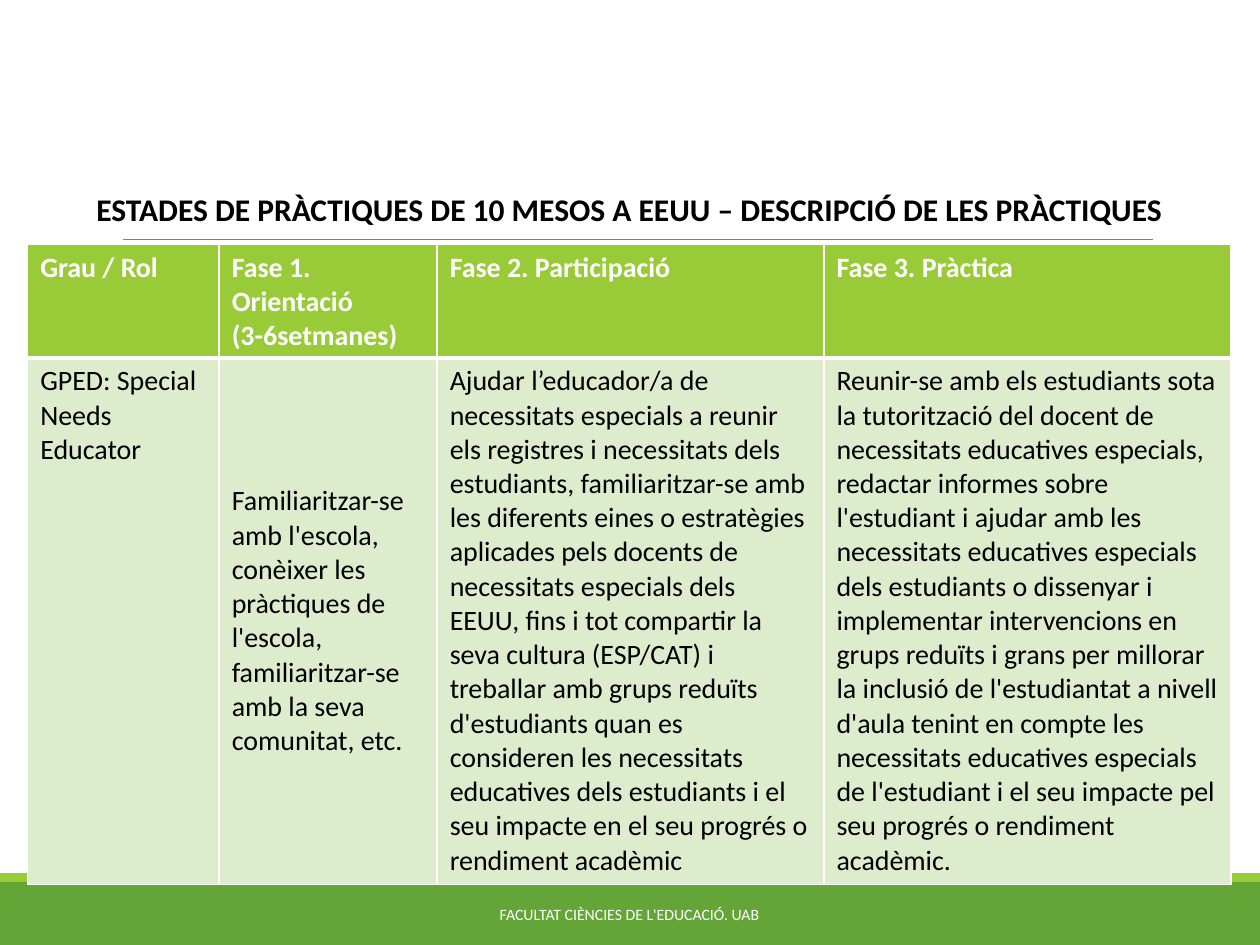
from dataclasses import dataclass

from lxml import etree
from pptx import Presentation
from pptx.dml.color import RGBColor
from pptx.enum.shapes import MSO_CONNECTOR, MSO_SHAPE
from pptx.enum.text import MSO_ANCHOR, PP_ALIGN
from pptx.oxml.ns import qn
from pptx.slide import Slide
from pptx.table import _Cell
from pptx.util import Inches, Pt

RECTANGLE = MSO_SHAPE.RECTANGLE
STRAIGHT = MSO_CONNECTOR.STRAIGHT
TOP, MIDDLE = MSO_ANCHOR.TOP, MSO_ANCHOR.MIDDLE
LEFT, CENTER = PP_ALIGN.LEFT, PP_ALIGN.CENTER

WHITE = RGBColor(0xFF, 0xFF, 0xFF)
BLACK = RGBColor(0x00, 0x00, 0x00)
GRAY = RGBColor(0x80, 0x80, 0x80)
GREEN = RGBColor(0x63, 0xA5, 0x37)
LIME = RGBColor(0x99, 0xCB, 0x38)
PALE_GREEN = RGBColor(0xDE, 0xEC, 0xCE)

FONT = "Calibri"
SLIDE_WIDTH, SLIDE_HEIGHT = 10, 7.5
TABLE_LEFT, TABLE_TOP = 0.22, 1.94
COLUMN_WIDTHS = (1.52, 1.73, 3.07, 3.23)
ROW_HEIGHTS = (0.89, 4.18)


@dataclass(frozen=True)
class Box:
    left: float
    top: float
    width: float
    height: float

    def lengths(self) -> list[int]:
        return [Inches(n) for n in (self.left, self.top, self.width, self.height)]


@dataclass(frozen=True)
class TextStyle:
    size: float
    color: RGBColor
    bold: bool = False
    align: PP_ALIGN = LEFT


@dataclass(frozen=True)
class Band:
    box: Box
    color: RGBColor


@dataclass(frozen=True)
class Phase:
    """One table column: its heading and its description."""
    heading: str
    description: str
    anchor: MSO_ANCHOR = TOP


BANDS = (
    Band(Box(0, 7, SLIDE_WIDTH, 0.5), GREEN),
    Band(Box(0, 6.93, SLIDE_WIDTH, 0.07), LIME),
)
TITLE_BOX = Box(0.64, 1.49, 8.72, 5.43)
FOOTER_BOX = Box(3.02, 7.06, 3.95, 0.4)

TITLE_STYLE = TextStyle(18, BLACK, True)
FOOTER_STYLE = TextStyle(9, WHITE, align=CENTER)
HEADING_STYLE = TextStyle(16, WHITE, True)
DESCRIPTION_STYLE = TextStyle(16, BLACK)

PHASES = (
    Phase("Grau / Rol", "GPED: Special Needs Educator"),
    Phase(
        "Fase 1. Orientació\n(3-6setmanes)",
        "Familiaritzar-se amb l'escola, conèixer les pràctiques de l'escola, "
        "familiaritzar-se amb la seva comunitat, etc.",
        MIDDLE,
    ),
    Phase(
        "Fase 2. Participació",
        "Ajudar l’educador/a de necessitats especials a reunir els registres i "
        "necessitats dels estudiants, familiaritzar-se amb les diferents eines o "
        "estratègies aplicades pels docents de necessitats especials dels EEUU, "
        "fins i tot compartir la seva cultura (ESP/CAT) i treballar amb grups "
        "reduïts d'estudiants quan es consideren les necessitats educatives dels "
        "estudiants i el seu impacte en el seu progrés o rendiment acadèmic",
    ),
    Phase(
        "Fase 3. Pràctica",
        "Reunir-se amb els estudiants sota la tutorització del docent de "
        "necessitats educatives especials, redactar informes sobre l'estudiant i "
        "ajudar amb les necessitats educatives especials dels estudiants o "
        "dissenyar i implementar intervencions en grups reduïts i grans per "
        "millorar la inclusió de l'estudiantat a nivell d'aula tenint en compte "
        "les necessitats educatives especials de l'estudiant i el seu impacte pel "
        "seu progrés o rendiment acadèmic.",
    ),
)


def write(text_frame, text: str, style: TextStyle) -> None:
    text_frame.word_wrap = True
    text_frame.text = text
    font_values = {"name": FONT, "size": Pt(style.size), "bold": style.bold}
    for paragraph in text_frame.paragraphs:
        paragraph.alignment = style.align
        for run in paragraph.runs:
            for name, value in font_values.items():
                setattr(run.font, name, value)
            run.font.color.rgb = style.color


def add_band(slide: Slide, band: Band) -> None:
    shape = slide.shapes.add_shape(RECTANGLE, *band.box.lengths())
    shape.shadow.inherit = False
    shape.fill.solid()
    shape.fill.fore_color.rgb = band.color
    shape.line.fill.background()


def add_rule(slide: Slide, left: float, right: float, top: float) -> None:
    rule = slide.shapes.add_connector(
        STRAIGHT, Inches(left), Inches(top), Inches(right), Inches(top))
    rule.line.color.rgb = GRAY
    rule.line.width = Pt(0.5)
    etree.SubElement(rule._element.spPr, qn("a:effectLst"))


def add_title(slide: Slide, text: str) -> None:
    text_frame = slide.shapes.add_textbox(*TITLE_BOX.lengths()).text_frame
    write(text_frame, text, TITLE_STYLE)
    text_frame.margin_left = text_frame.margin_right = 0
    paragraph = text_frame.paragraphs[0]
    spacing = {"line_spacing": 0.9, "space_before": Pt(12), "space_after": Pt(2)}
    for name, value in spacing.items():
        setattr(paragraph, name, value)
    properties = paragraph._p.get_or_add_pPr()
    properties.set("marL", str(Inches(0.1)))
    properties.set("indent", str(Inches(-0.1)))
    bullet_color = etree.SubElement(properties, qn("a:buClr"))
    etree.SubElement(bullet_color, qn("a:srgbClr"), val=str(LIME))
    etree.SubElement(properties, qn("a:buChar"), char=" ")


def add_footer(slide: Slide, text: str) -> None:
    text_frame = slide.shapes.add_textbox(*FOOTER_BOX.lengths()).text_frame
    write(text_frame, text, FOOTER_STYLE)
    text_frame.vertical_anchor = MIDDLE


def set_borders(cell: _Cell, top: float, bottom: float) -> None:
    """Draw white borders, 1 point at the sides; must run before the fill is set."""
    properties = cell._tc.get_or_add_tcPr()
    for side, width in {"lnL": 1, "lnR": 1, "lnT": top, "lnB": bottom}.items():
        border = etree.SubElement(properties, qn(f"a:{side}"), w=str(Pt(width)))
        fill = etree.SubElement(border, qn("a:solidFill"))
        etree.SubElement(fill, qn("a:srgbClr"), val=str(WHITE))


def fill_cell(cell: _Cell, text: str, style: TextStyle, color: RGBColor) -> None:
    write(cell.text_frame, text, style)
    cell.fill.solid()
    cell.fill.fore_color.rgb = color


def add_phase_table(slide: Slide) -> None:
    box = Box(TABLE_LEFT, TABLE_TOP, sum(COLUMN_WIDTHS), sum(ROW_HEIGHTS))
    table = slide.shapes.add_table(
        len(ROW_HEIGHTS), len(PHASES), *box.lengths()).table
    for row, height in zip(table.rows, ROW_HEIGHTS):
        row.height = Inches(height)
    for index, (phase, width) in enumerate(zip(PHASES, COLUMN_WIDTHS)):
        table.columns[index].width = Inches(width)
        heading, description = table.cell(0, index), table.cell(1, index)
        set_borders(heading, top=1, bottom=3)
        set_borders(description, top=3, bottom=1)
        fill_cell(heading, phase.heading, HEADING_STYLE, LIME)
        fill_cell(description, phase.description, DESCRIPTION_STYLE, PALE_GREEN)
        description.vertical_anchor = phase.anchor


def main() -> None:
    presentation = Presentation()
    presentation.slide_width = Inches(SLIDE_WIDTH)
    presentation.slide_height = Inches(SLIDE_HEIGHT)
    slide = presentation.slides.add_slide(presentation.slide_layouts[6])
    for band in BANDS:
        add_band(slide, band)
    add_rule(slide, left=0.98, right=9.15, top=1.9)
    add_title(slide, "ESTADES DE PRÀCTIQUES DE 10 MESOS A EEUU – DESCRIPCIÓ DE LES PRÀCTIQUES")
    add_footer(slide, "FACULTAT CIÈNCIES DE L'EDUCACIÓ. UAB")
    add_phase_table(slide)
    presentation.save("out.pptx")


if __name__ == "__main__":
    main()
